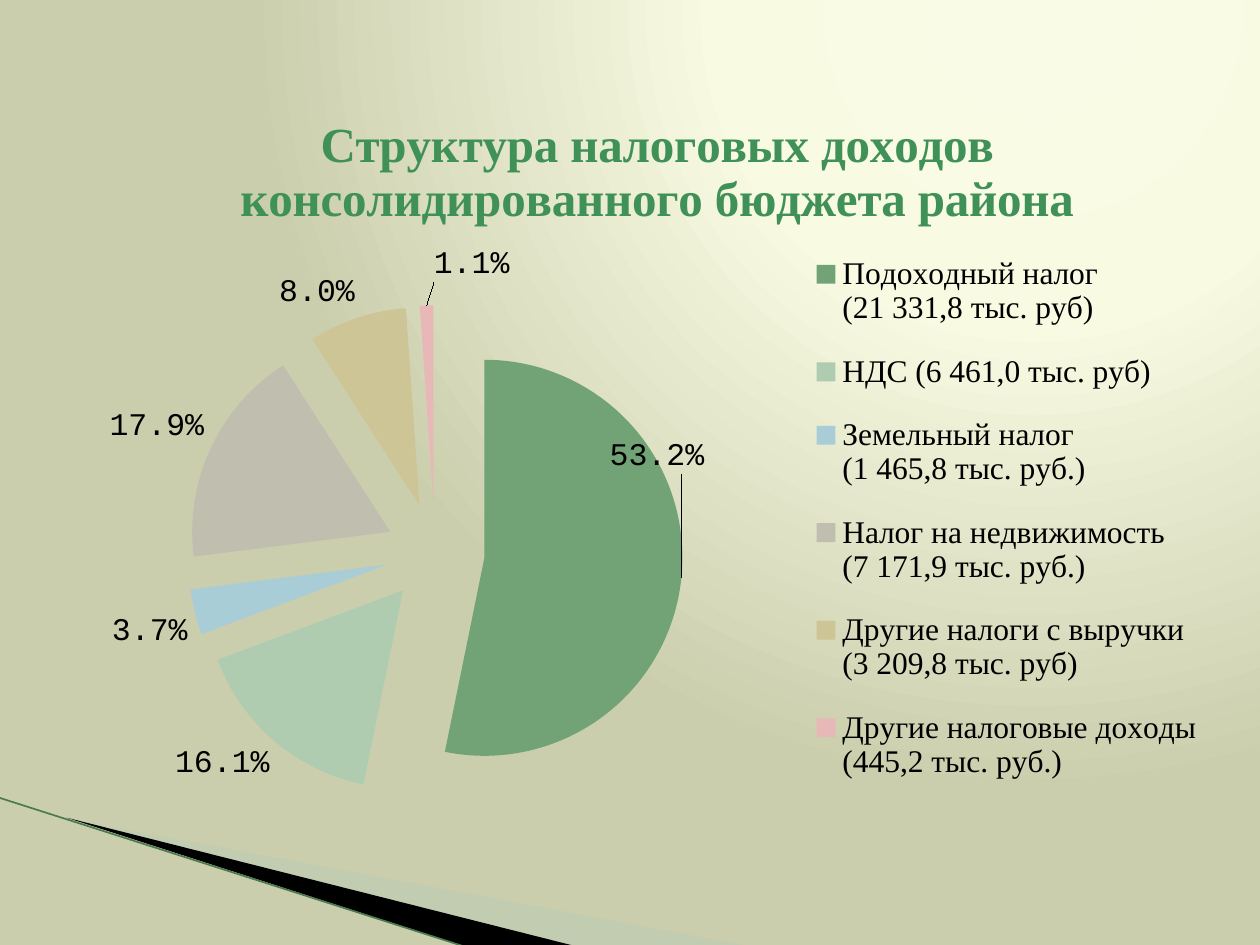
from dataclasses import dataclass

from pptx import Presentation
from pptx.chart.data import CategoryChartData
from pptx.dml.color import RGBColor
from pptx.enum.chart import XL_CHART_TYPE, XL_LABEL_POSITION as LabelPos, XL_LEGEND_POSITION as LegendPos
from pptx.enum.shapes import MSO_CONNECTOR
from pptx.oxml import parse_xml
from pptx.oxml.ns import nsdecls, qn
from pptx.oxml.xmlchemy import OxmlElement
from pptx.util import Inches, Pt


@dataclass(frozen=True)
class Theme:
    """Colours, fonts and type sizes of the slide."""
    glow: tuple = ((0, "F9FBE7"), (40, "F8FAE2"), (100, "CBCEAD"))
    slices: tuple = ("72A376", "B0CCB0", "A8CDD7", "C0BEAF", "CEC597", "E8B7B7")
    title: str = "3F9158"
    text: str = "000000"
    wedge: str = "B3CBB5"
    edge: str = "4A7A50"
    serif: str = "Times New Roman"
    mono: str = "Courier New"
    title_size: int = 28
    text_size: int = 18


THEME = Theme()
TITLE = "Структура налоговых доходов консолидированного бюджета района"
TAXES = (
    ("Подоходный налог\n(21 331,8 тыс. руб)", 0.532),
    ("НДС (6 461,0 тыс. руб)", 0.161),
    ("Земельный налог\n(1 465,8 тыс. руб.)", 0.037),
    ("Налог на недвижимость\n(7 171,9 тыс. руб.)", 0.179),
    ("Другие налоги с выручки\n(3 209,8 тыс. руб)", 0.08),
    ("Другие налоговые доходы\n(445,2 тыс. руб.)", 0.011),
)
MOVED_LABELS = {0: (-0.07, -0.18), 5: (0.04, -0.02)}


def set_background(slide):
    """Fill the background with a circular glow from the upper right."""
    fill = slide.background.fill
    fill.solid()
    stops = "".join(
        f'<a:gs pos="{pos * 1000}"><a:srgbClr val="{color}"/></a:gs>' for pos, color in THEME.glow)
    grad = parse_xml(
        f'<a:gradFill {nsdecls("a")} rotWithShape="1"><a:gsLst>{stops}</a:gsLst>'
        '<a:path path="circle"><a:fillToRect l="65000" t="0" r="0" b="98000"/></a:path></a:gradFill>')
    bg_pr = slide.background._cSld.find(f'{qn("p:bg")}/{qn("p:bgPr")}')
    bg_pr.replace(bg_pr.find(qn("a:solidFill")), grad)


def add_wedge(slide, points, color, opacity=100):
    """Draw a closed borderless outline."""
    pts = [(Inches(x), Inches(y)) for x, y in points]
    builder = slide.shapes.build_freeform(*pts[0])
    builder.add_line_segments(pts[1:], close=True)
    sp = builder.convert_to_shape()
    sp.shadow.inherit = False
    sp.line.fill.background()
    sp.fill.solid()
    sp.fill.fore_color.rgb = RGBColor.from_string(color)
    if opacity < 100:
        alpha = OxmlElement("a:alpha")
        alpha.set("val", str(opacity * 1000))
        sp._element.spPr.find(f'{qn("a:solidFill")}/{qn("a:srgbClr")}').append(alpha)


def add_edge(slide, start, end):
    """Draw the thin line along the corner wedge."""
    line = slide.shapes.add_connector(
        MSO_CONNECTOR.STRAIGHT, *(Inches(v) for v in (*start, *end)))
    line.line.color.rgb = RGBColor.from_string(THEME.edge)
    line.line.width = Pt(0.95)
    line._element.spPr.append(OxmlElement("a:effectLst"))


def style_font(font, name, size, color, bold=False):
    """Apply face, size, colour and weight."""
    font.name, font.size, font.bold = name, Pt(size), bold
    font.color.rgb = RGBColor.from_string(color)


def place(parent, before, **values):
    """Give a chart part a manual layout in fractions of the chart."""
    for old in parent.findall(qn("c:layout")):
        parent.remove(old)
    items = "".join(f'<c:{key} val="{val}"/>' for key, val in values.items())
    layout = parse_xml(
        f'<c:layout {nsdecls("c")}><c:manualLayout>{items}</c:manualLayout></c:layout>')
    if before is None:
        parent.insert(0, layout)
    else:
        parent.find(qn(before)).addnext(layout)


def style_slices(series):
    """Pull the slices apart, colour them and label them."""
    explosion = OxmlElement("c:explosion")
    explosion.set("val", "25")
    series._element.find(qn("c:tx")).addnext(explosion)
    for i, color in enumerate(THEME.slices):
        fill = series.points[i].format.fill
        fill.solid()
        fill.fore_color.rgb = RGBColor.from_string(color)
    labels = series.data_labels
    labels.show_value = True
    labels.number_format, labels.number_format_is_linked = "0.0%", False
    labels.position = LabelPos.OUTSIDE_END
    style_font(labels.font, THEME.mono, THEME.text_size, THEME.text)
    for i, (dx, dy) in MOVED_LABELS.items():
        label = series.points[i].data_label
        style_font(label.font, THEME.mono, THEME.text_size, THEME.text)
        label.position = LabelPos.OUTSIDE_END
        place(labels._element.xpath(f'c:dLbl[c:idx/@val="{i}"]')[0], "c:idx", x=dx, y=dy)


def add_tax_chart(slide):
    """Add the pie of tax revenue with its title and legend."""
    data = CategoryChartData(number_format="0.0%")
    data.categories = [name for name, _ in TAXES]
    data.add_series(TITLE, [share for _, share in TAXES])
    box = (Inches(v) for v in (0.67, 0.52, 8.98, 6.14))
    chart = slide.shapes.add_chart(XL_CHART_TYPE.PIE, *box, data).chart
    style_font(chart.font, THEME.mono, THEME.text_size, THEME.text)

    chart.has_title = True
    tf = chart.chart_title.text_frame
    tf.text = TITLE
    style_font(tf.paragraphs[0].runs[0].font, THEME.serif, THEME.title_size, THEME.title, bold=True)
    place(chart.chart_title._element, "c:tx", xMode="edge", yMode="edge", x=0.13, y=0.05)

    chart.has_legend = True
    legend = chart.legend
    legend.position = LegendPos.RIGHT
    legend.include_in_layout = False
    style_font(legend.font, THEME.serif, THEME.text_size, THEME.text)
    place(legend._element, "c:legendPos", xMode="edge", yMode="edge", x=0.64, y=0.21, w=0.35, h=0.75)

    place(chart._chartSpace.chart.plotArea, None, layoutTarget="inner",
          xMode="edge", yMode="edge", x=0.09, y=0.31, w=0.44, h=0.64)
    style_slices(chart.plots[0].series[0])


def main():
    """Build and save the slide."""
    prs = Presentation()
    prs.slide_width, prs.slide_height = Inches(10), Inches(7.5)
    slide = prs.slides.add_slide(prs.slide_layouts[6])
    set_background(slide)
    add_wedge(slide, ((0.55, 6.5), (5.95, 7.51), (4.56, 7.51)), THEME.wedge, opacity=40)
    add_wedge(slide, ((0.53, 6.49), (4.57, 7.51), (3.72, 7.52)), THEME.text)
    add_edge(slide, (-0.01, 6.33), (3.71, 7.52))
    add_tax_chart(slide)
    prs.save("out.pptx")


if __name__ == "__main__":
    main()
